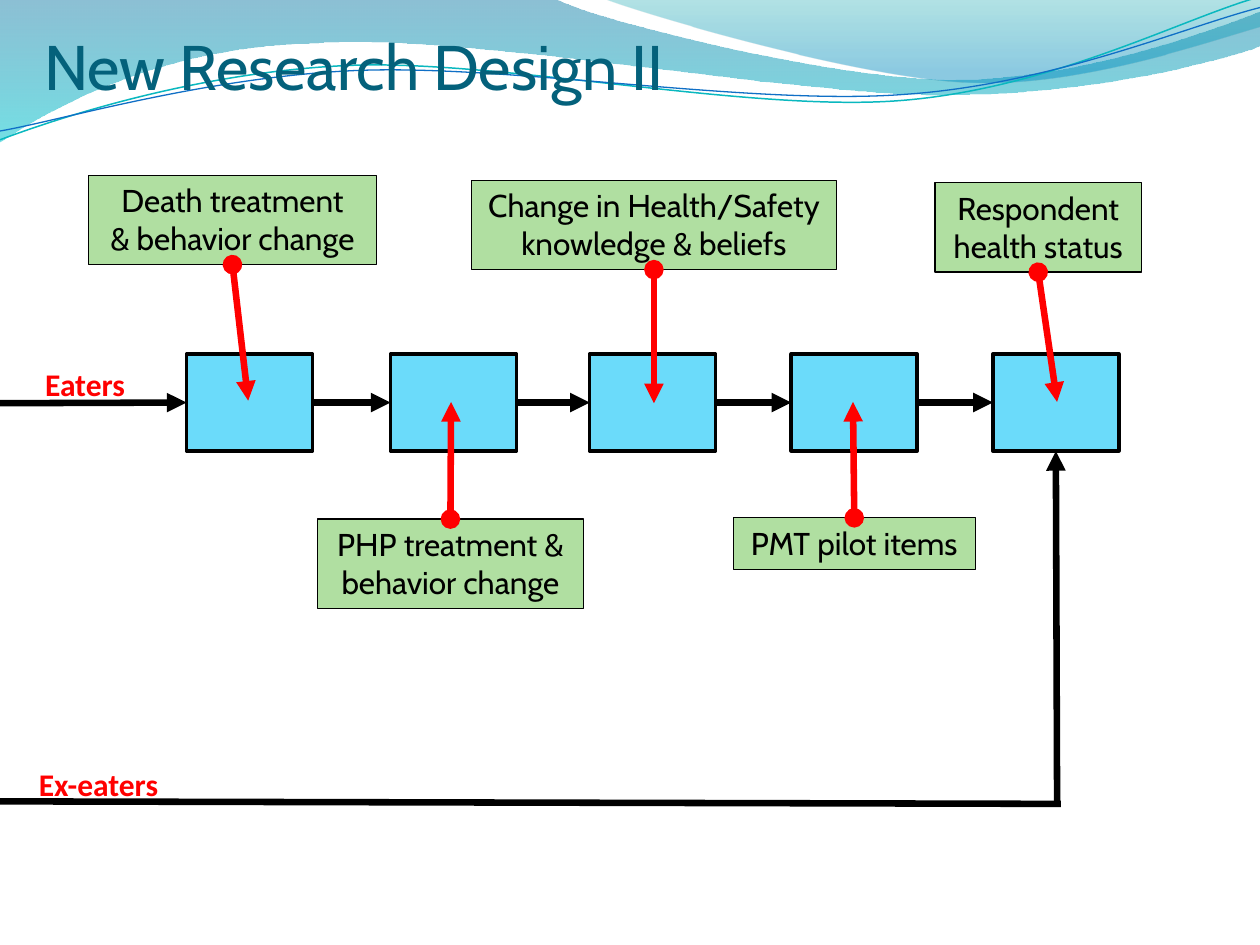
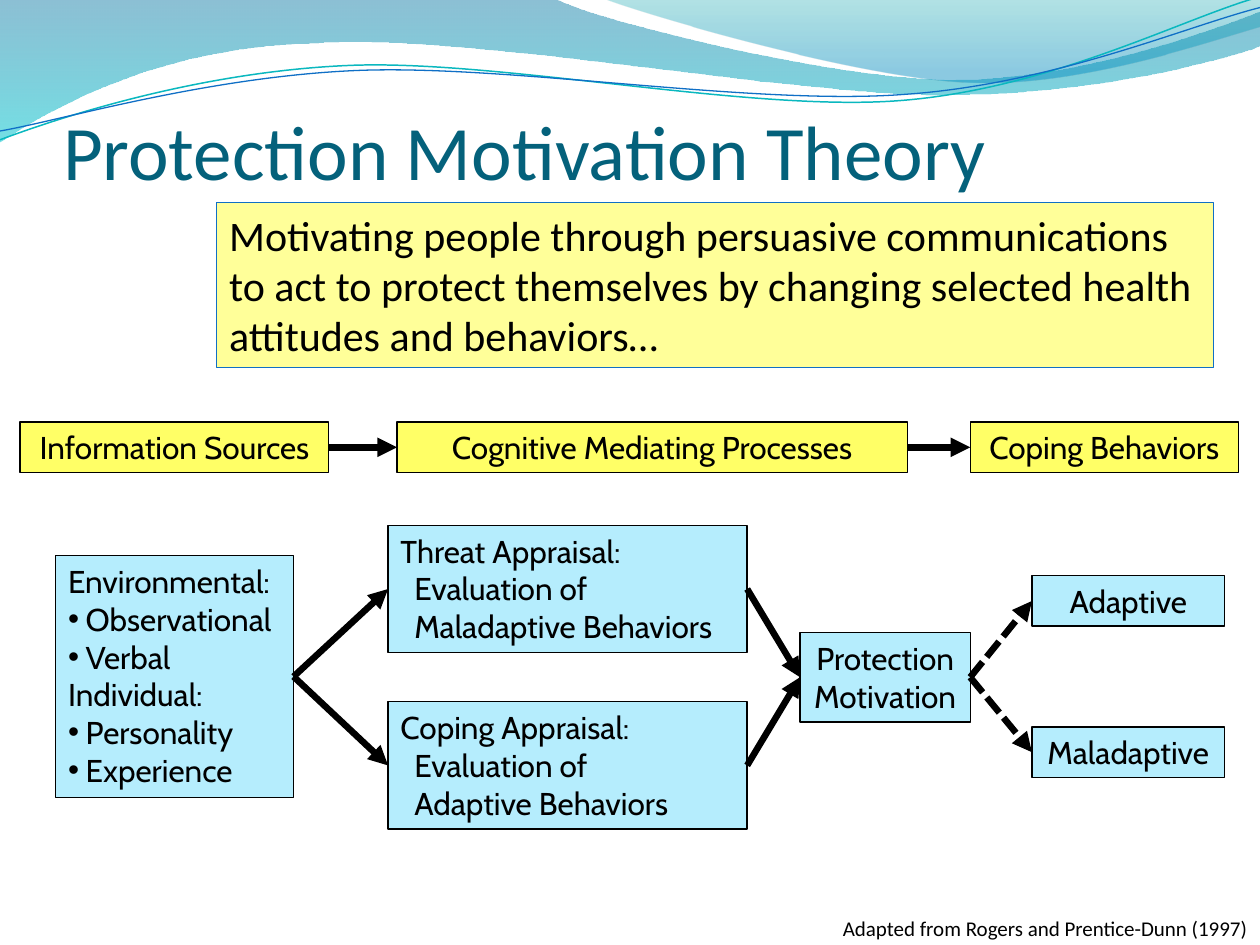
"""Build two research slides: a panel design and the Protection Motivation Theory."""
from dataclasses import dataclass
from typing import Any, Optional

from lxml.etree import SubElement
from pptx import Presentation
from pptx.dml.color import RGBColor
from pptx.enum.dml import MSO_LINE
from pptx.enum.shapes import MSO_CONNECTOR, MSO_SHAPE
from pptx.enum.text import MSO_ANCHOR, MSO_AUTO_SIZE, PP_ALIGN
from pptx.oxml.ns import qn
from pptx.util import Pt

PX = 9144
TOP, LEFT, BOTTOM, RIGHT = range(4)
BLACK, RED, TEAL, BLUE = "000000", "FF0000", "04617B", "0F6FC6"
STEP_BLUE, LABEL_GREEN, NODE_BLUE = "6BDBFA", "B0DFA1", "B5EDFD"
HEADER_YELLOW, QUOTE_YELLOW = "FFFF66", "FFFF99"


@dataclass(frozen=True)
class Line:
    text: str
    indent: int = 0
    bullet: bool = False


@dataclass(frozen=True)
class Box:
    at: tuple[int, int, int, int]
    lines: tuple[Line, ...] = ()
    fill: Optional[str] = None
    border: str = BLACK
    border_width: float = 0.75
    font: str = "Cabin"
    size: int = 18
    color: str = BLACK
    bold: bool = False
    align: PP_ALIGN = PP_ALIGN.CENTER


@dataclass(frozen=True)
class Wave:
    start: tuple[int, int]
    segments: tuple[tuple[tuple[int, int], ...], ...]
    stops: tuple[tuple[float, str, int], ...] = ()
    stroke: str = ""
    width: float = 0


WAVES = (
    Wave((0, 0), (
        ((440, -1),), ((476, 17), (664, 63), (758, 63)), ((853, 63), (958, 26), (1000, 9)),
        ((1001, 36),), ((983, 44), (870, 76), (746, 75)), ((622, 75), (382, 28), (257, 34)),
        ((129, 36), (46, 83), (-1, 113)), ((0, 0),)),
        stops=((0, "0074A1", 45), (1, "00C6CF", 55))),
    Wave((479, -1), (
        ((509, 11), (682, 62), (769, 65)), ((856, 69), (961, 32), (1000, 21)), ((1000, 0),),
        ((479, -1),)), stops=((0, "00A1A9", 30), (0.8, "008BBF", 45))),
    Wave((0, 111), (
        ((48, 93), (158, 57), (277, 52)), ((395, 47), (593, 89), (713, 80)),
        ((833, 71), (938, 15), (998, -2))), stroke="0AB8BF", width=0.85),
    Wave((0, 104), (
        ((47, 96), (164, 61), (283, 56)), ((403, 51), (597, 84), (717, 75)),
        ((836, 67), (941, 21), (1000, 6))), stroke=BLUE, width=0.75),
)


def plain(*texts: str) -> tuple[Line, ...]:
    """Return unindented lines."""
    return tuple(Line(text) for text in texts)


def rgb(value: str) -> RGBColor:
    """Turn a hex string into a colour."""
    return RGBColor.from_string(value)


def apply_format(target: Any, values: dict[str, Any]) -> None:
    """Set each named value on the target."""
    for name, value in values.items():
        setattr(target, name, value)


def bend(ribbon: Any, wave: Wave) -> None:
    """Turn each run of three straight segments of a curve into one cubic segment."""
    straights = iter(list(ribbon.element.iter(qn("a:lnTo"))))
    for segment in wave.segments:
        pieces = [next(straights) for _ in segment]
        if len(pieces) == 3:
            outline = pieces[0].getparent()
            cubic = SubElement(outline, qn("a:cubicBezTo"))
            outline.replace(pieces[0], cubic)
            for piece in pieces:
                cubic.append(piece[0])
            for piece in pieces[1:]:
                outline.remove(piece)


def draw_wave(slide: Any, wave: Wave) -> Any:
    """Draw one wave as a gradient band or an open stroke."""
    builder = slide.shapes.build_freeform(*wave.start, scale=PX)
    builder.add_line_segments([point for segment in wave.segments for point in segment],
                              close=bool(wave.stops))
    ribbon = builder.convert_to_shape()
    bend(ribbon, wave)
    ribbon.shadow.inherit = False
    if wave.stops:
        ribbon.fill.gradient()
        ribbon.fill.gradient_angle = 270
        for stop, (position, color, _) in zip(ribbon.fill.gradient_stops, wave.stops):
            stop.position = position
            stop.color.rgb = rgb(color)
        shades = ribbon.element.spPr.iter(qn("a:srgbClr"))
        for shade, (_, _, opacity) in zip(list(shades), wave.stops):
            SubElement(shade, qn("a:alpha"), val=str(opacity * 1000))
        ribbon.line.fill.background()
    else:
        ribbon.fill.background()
        ribbon.line.color.rgb = rgb(wave.stroke)
        ribbon.line.width = Pt(wave.width)
    return ribbon


def decorate_master(prs: Any, slide: Any) -> None:
    """Place the waves on the slide master, shared by all slides."""
    for number, wave in enumerate(WAVES):
        ribbon = draw_wave(slide, wave).element
        ribbon.nvSpPr.cNvPr.set("id", str(100 + number))
        prs.slide_master.shapes.element.insert(2 + number, ribbon)


def place(part: Any, at: tuple[int, int, int, int]) -> None:
    """Move and size a part in px."""
    apply_format(part, dict(zip(("left", "top", "width", "height"), (v * PX for v in at))))


def write(part: Any, box: Box, frame_format: dict[str, Any]) -> None:
    """Write the lines of a box into a part."""
    frame = part.text_frame
    apply_format(frame, {"auto_size": MSO_AUTO_SIZE.NONE, "vertical_anchor": MSO_ANCHOR.TOP,
                         "word_wrap": True, **frame_format})
    for number, line in enumerate(box.lines):
        paragraph = frame.add_paragraph() if number else frame.paragraphs[0]
        apply_format(paragraph, {"alignment": box.align, "space_before": Pt(0)})
        run = paragraph.add_run()
        run.text = line.text
        apply_format(run.font, {"name": box.font, "size": Pt(box.size), "bold": box.bold})
        run.font.color.rgb = rgb(box.color)
        properties = paragraph._p.get_or_add_pPr()
        properties.set("marL", str(line.indent * PX))
        properties.set("indent", str(-line.indent * PX if line.bullet else 0))
        if line.bullet:
            SubElement(properties, qn("a:buFont"), typeface="Arial")
            SubElement(properties, qn("a:buChar"), char="•")
        else:
            SubElement(properties, qn("a:buNone"))


def add_title(slide: Any, box: Box, anchor: MSO_ANCHOR) -> None:
    """Fill the title placeholder."""
    place(slide.shapes.title, box.at)
    write(slide.shapes.title, box, {
        "vertical_anchor": anchor, "margin_left": 0, "margin_top": 5 * PX,
        "margin_right": 0, "margin_bottom": 0})


def fill_box(part: Any, box: Box) -> Any:
    """Colour, outline and write a box."""
    part.fill.solid()
    part.fill.fore_color.rgb = rgb(box.fill)
    part.line.color.rgb = rgb(box.border)
    part.line.width = Pt(box.border_width)
    write(part, box, {})
    return part


def add_box(slide: Any, box: Box) -> Any:
    """Add a filled rectangle."""
    part = slide.shapes.add_shape(MSO_SHAPE.RECTANGLE, *(v * PX for v in box.at))
    part.shadow.inherit = False
    return fill_box(part, box)


def add_caption(slide: Any, box: Box) -> None:
    """Add free-standing text."""
    write(slide.shapes.add_textbox(*(v * PX for v in box.at)), box, {"word_wrap": False})


def add_link(slide: Any, start: tuple, end: tuple, color: str = BLACK, dashed: bool = False,
             head: str = "", tail: str = "triangle") -> None:
    """Link two ends, each a px point or a (shape, side) pair."""
    points = [(0, 0) if hasattr(spot[0], "shape_id") else spot for spot in (start, end)]
    link = slide.shapes.add_connector(
        MSO_CONNECTOR.STRAIGHT, *(v * PX for point in points for v in point))
    for spot, join in ((start, link.begin_connect), (end, link.end_connect)):
        if hasattr(spot[0], "shape_id"):
            join(*spot)
    link.line.color.rgb = rgb(color)
    link.line.width = Pt(3.75)
    if dashed:
        link.line.dash_style = MSO_LINE.SQUARE_DOT
    stroke = link.line._get_or_add_ln()
    for tag, kind in (("a:headEnd", head), ("a:tailEnd", tail)):
        if kind:
            SubElement(stroke, qn(tag), type=kind)
    SubElement(link.element.spPr, qn("a:effectLst"))


def build_design(slide: Any) -> None:
    """Build the research design flow."""
    add_title(slide, Box((35, -13, 930, 125), plain("New Research Design II"), size=36,
                         color=TEAL, align=PP_ALIGN.LEFT), MSO_ANCHOR.MIDDLE)
    steps = [add_box(slide, Box((left, 281, 100, 77), fill=STEP_BLUE, border_width=2))
             for left in (148, 310, 468, 628, 788)]
    add_link(slide, (0, 320), (steps[0], LEFT))
    for before, after in zip(steps, steps[1:]):
        add_link(slide, (before, RIGHT), (after, LEFT))
    add_link(slide, (-3, 636), (842, 638), tail="")
    add_link(slide, (839, 638), (steps[-1], BOTTOM))
    for at, group in (((26, 285, 84, 40), "Eaters"), ((21, 602, 116, 40), "Ex-eaters")):
        add_caption(slide, Box(at, plain(group), font="Calibri", color=RED, bold=True,
                               align=PP_ALIGN.LEFT))
    measures = (
        ((70, 139, 229, 71), ("Death treatment", "& behavior change"), BOTTOM, (197, 318)),
        ((252, 412, 211, 71), ("PHP treatment &", "behavior change"), TOP, (358, 319)),
        ((374, 143, 290, 71), ("Change in Health/Safety", "knowledge & beliefs"), BOTTOM,
         (519, 320)),
        ((582, 411, 192, 41), ("PMT pilot items",), TOP, (677, 319)),
        ((742, 145, 164, 71), ("Respondent", "health status"), BOTTOM, (839, 319)),
    )
    for at, texts, side, target in measures:
        measure = add_box(slide, Box(at, plain(*texts), LABEL_GREEN))
        add_link(slide, (measure, side), target, RED, head="oval")


def build_theory(slide: Any) -> None:
    """Build the theory model."""
    add_title(slide, Box((50, 77, 908, 125), plain("Protection Motivation Theory"),
                         font="Calibri", size=44, color=TEAL, align=PP_ALIGN.LEFT),
              MSO_ANCHOR.TOP)
    add_box(slide, Box((172, 161, 791, 131), plain(
        "Motivating people through persuasive communications",
        "to act to protect themselves by changing selected health",
        "attitudes and behaviors…"), QUOTE_YELLOW, BLUE, font="Calibri", size=24,
        align=PP_ALIGN.LEFT))
    stages = [add_box(slide, Box((left, 335, width, 40), plain(stage), HEADER_YELLOW))
              for left, width, stage in ((16, 245, "Information Sources"),
                                         (315, 405, "Cognitive Mediating Processes"),
                                         (770, 213, "Coping Behaviors"))]
    for before, after in zip(stages, stages[1:]):
        add_link(slide, (before, RIGHT), (after, LEFT))

    source_box = Box((44, 441, 189, 192), (
        Line("Environmental:"), Line("Observational", 14, True), Line("Verbal", 14, True),
        Line("Individual:"), Line("Personality", 14, True), Line("Experience", 14, True)),
        NODE_BLUE, align=PP_ALIGN.LEFT)
    sources = slide.placeholders[1]
    place(sources, source_box.at)
    fill_box(sources, source_box)

    motivation = add_box(slide, Box((635, 502, 135, 71), plain("Protection", "Motivation"),
                                    NODE_BLUE))
    for top, appraisal, behaviors in ((417, "Threat Appraisal:", "Maladaptive Behaviors"),
                                      (557, "Coping Appraisal:", "Adaptive Behaviors")):
        process = add_box(slide, Box((308, top, 285, 101), (
            Line(appraisal), Line("Evaluation of", 11), Line(behaviors, 11)),
            NODE_BLUE, align=PP_ALIGN.LEFT))
        add_link(slide, (sources, RIGHT), (process, LEFT))
        add_link(slide, (process, RIGHT), (motivation, LEFT))
    for top, response in ((457, "Adaptive"), (577, "Maladaptive")):
        outcome = add_box(slide, Box((819, top, 153, 40), plain(response), NODE_BLUE))
        add_link(slide, (motivation, RIGHT), (outcome, LEFT), dashed=True)
    add_caption(slide, Box((659, 722, 345, 30),
                           plain("Adapted from Rogers and Prentice-Dunn (1997)"),
                           font="Calibri", size=12, align=PP_ALIGN.LEFT))


def main() -> None:
    """Build and save the presentation."""
    prs = Presentation()
    apply_format(prs, {"slide_width": 1000 * PX, "slide_height": 750 * PX})
    design = prs.slides.add_slide(prs.slide_layouts[5])
    decorate_master(prs, design)
    build_design(design)
    build_theory(prs.slides.add_slide(prs.slide_layouts[1]))
    prs.save("out.pptx")


if __name__ == "__main__":
    main()
